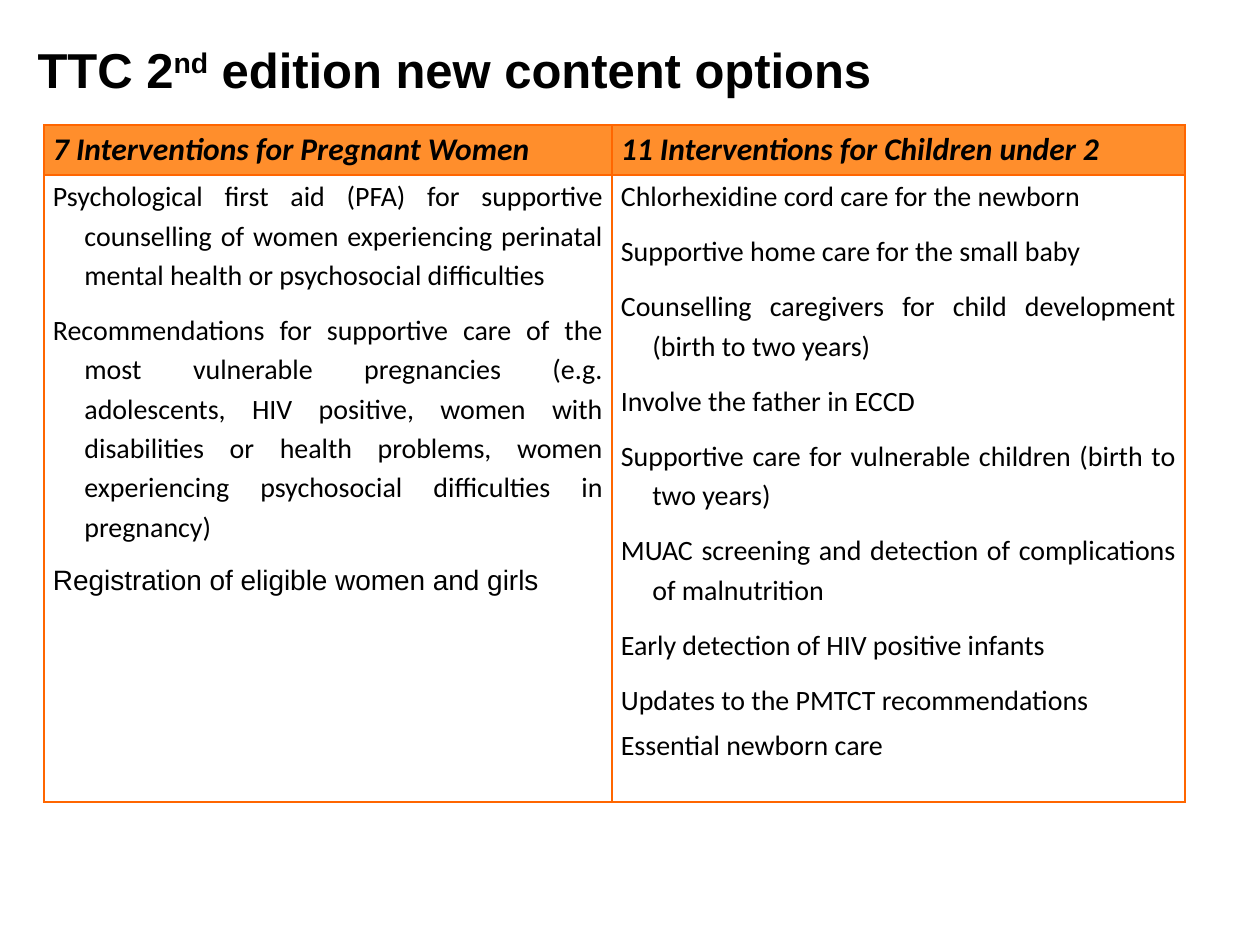
from pptx import Presentation, util as u
from pptx.dml.color import RGBColor
from pptx.enum import text
from pptx.oxml import parse_xml
from pptx.oxml.ns import nsdecls

PX = u.Inches(1) // 126
BLACK = RGBColor(0, 0, 0)
HEADER_FILL = RGBColor(0xFF, 0x8E, 0x2C)
BORDER = RGBColor(0xFF, 0x66, 0x00)
JUSTIFY = text.PP_ALIGN.JUSTIFY

TITLE_FONT = dict(name="Arial", size=u.Pt(28), bold=True)
HEADER_FONT = dict(name="Calibri", size=u.Pt(18), bold=True, italic=True)
BODY_FONT = dict(name="Calibri", size=u.Pt(16), bold=False, italic=False)
ARIAL_FONT = dict(BODY_FONT, name="Arial")

HEADER_FORMAT = dict(alignment=JUSTIFY, line_spacing=1.15,
                     space_before=u.Pt(3), space_after=u.Pt(3))
ITEM_FORMAT = dict(HEADER_FORMAT, space_after=u.Pt(6))
LAST_FORMAT = dict(alignment=text.PP_ALIGN.LEFT)

HEADERS = ["7 Interventions for Pregnant Women", "11 Interventions for Children under 2"]
WOMEN = [
    "Psychological first aid (PFA) for supportive counselling of women experiencing "
    "perinatal mental health or psychosocial difficulties",
    "Recommendations for supportive care of the most vulnerable pregnancies "
    "(e.g. adolescents, HIV positive, women with disabilities or health problems, "
    "women experiencing psychosocial difficulties in pregnancy)",
]
REGISTRATION = "Registration of eligible women and girls"
CHILDREN = [
    "Chlorhexidine cord care for the newborn",
    "Supportive home care for the small baby",
    "Counselling caregivers for child development (birth to two years)",
    "Involve the father in ECCD",
    "Supportive care for vulnerable children (birth to two years)",
    "MUAC screening and detection of complications of malnutrition",
    "Early detection of HIV positive infants",
    "Updates to the PMTCT recommendations",
]
NEWBORN = "Essential newborn care"


def px(length):
    return length * PX


def set_values(target, values):
    for name, value in values.items():
        setattr(target, name, value)


def add_span(para, wording, font):
    span = para.add_run()
    span.text = wording
    set_values(span.font, font)
    span.font.color.rgb = BLACK
    return span


def add_title(page):
    title = page.shapes.title
    set_values(title, dict(left=px(25), top=px(33), width=px(874), height=px(72)))
    frame = title.text_frame
    set_values(frame, dict(word_wrap=False, auto_size=text.MSO_AUTO_SIZE.SHAPE_TO_FIT_TEXT,
                           vertical_anchor=text.MSO_ANCHOR.MIDDLE))
    para = frame.paragraphs[0]
    para.alignment = JUSTIFY
    add_span(para, "TTC 2", TITLE_FONT)
    ordinal = add_span(para, "nd", TITLE_FONT)
    ordinal._r.get_or_add_rPr().set("baseline", "30000")
    add_span(para, " edition new content options", TITLE_FONT)


def add_borders(cell):
    properties = cell._tc.get_or_add_tcPr()
    for side in "LRTB":
        properties.append(parse_xml(
            f'<a:ln{side} {nsdecls("a")} w="{u.Pt(1)}"><a:solidFill>'
            f'<a:srgbClr val="{BORDER}"/></a:solidFill></a:ln{side}>'))


def fill_cell(cell, items, fill=None):
    set_values(cell, dict(margin_left=px(9), margin_right=px(9), margin_top=0, margin_bottom=0))
    add_borders(cell)
    if fill is None:
        cell.fill.background()
    else:
        cell.fill.solid()
        cell.fill.fore_color.rgb = fill
    frame = cell.text_frame
    for index, (wording, font, layout) in enumerate(items):
        para = frame.add_paragraph() if index else frame.paragraphs[0]
        set_values(para, layout)
        if index == 0:
            para.space_before = u.Pt(0)
        if layout is ITEM_FORMAT:
            indent = u.Inches(0.25)
            properties = para._p.get_or_add_pPr()
            properties.set("marL", str(indent))
            properties.set("indent", str(-indent))
        add_span(para, wording, font)


def add_interventions(page):
    widths, heights = [568, 573], [50, 627]
    table = page.shapes.add_table(2, 2, px(44), px(125), px(sum(widths)), px(sum(heights))).table
    table.horz_banding = False
    for column, width in zip(table.columns, widths):
        column.width = px(width)
    for row, height in zip(table.rows, heights):
        row.height = px(height)
    for index, header in enumerate(HEADERS):
        fill_cell(table.cell(0, index), [(header, HEADER_FONT, HEADER_FORMAT)], HEADER_FILL)
    women = [(item, BODY_FONT, ITEM_FORMAT) for item in WOMEN]
    children = [(item, BODY_FONT, ITEM_FORMAT) for item in CHILDREN]
    fill_cell(table.cell(1, 0), women + [(REGISTRATION, ARIAL_FONT, ITEM_FORMAT)])
    fill_cell(table.cell(1, 1), children + [(NEWBORN, BODY_FONT, LAST_FORMAT)])


def main():
    deck = Presentation()
    deck.slide_width, deck.slide_height = u.Inches(10), u.Inches(7.5)
    page = deck.slides.add_slide(deck.slide_layouts.get_by_name("Title Only"))
    add_title(page)
    add_interventions(page)
    deck.save("out.pptx")


if __name__ == "__main__":
    main()
